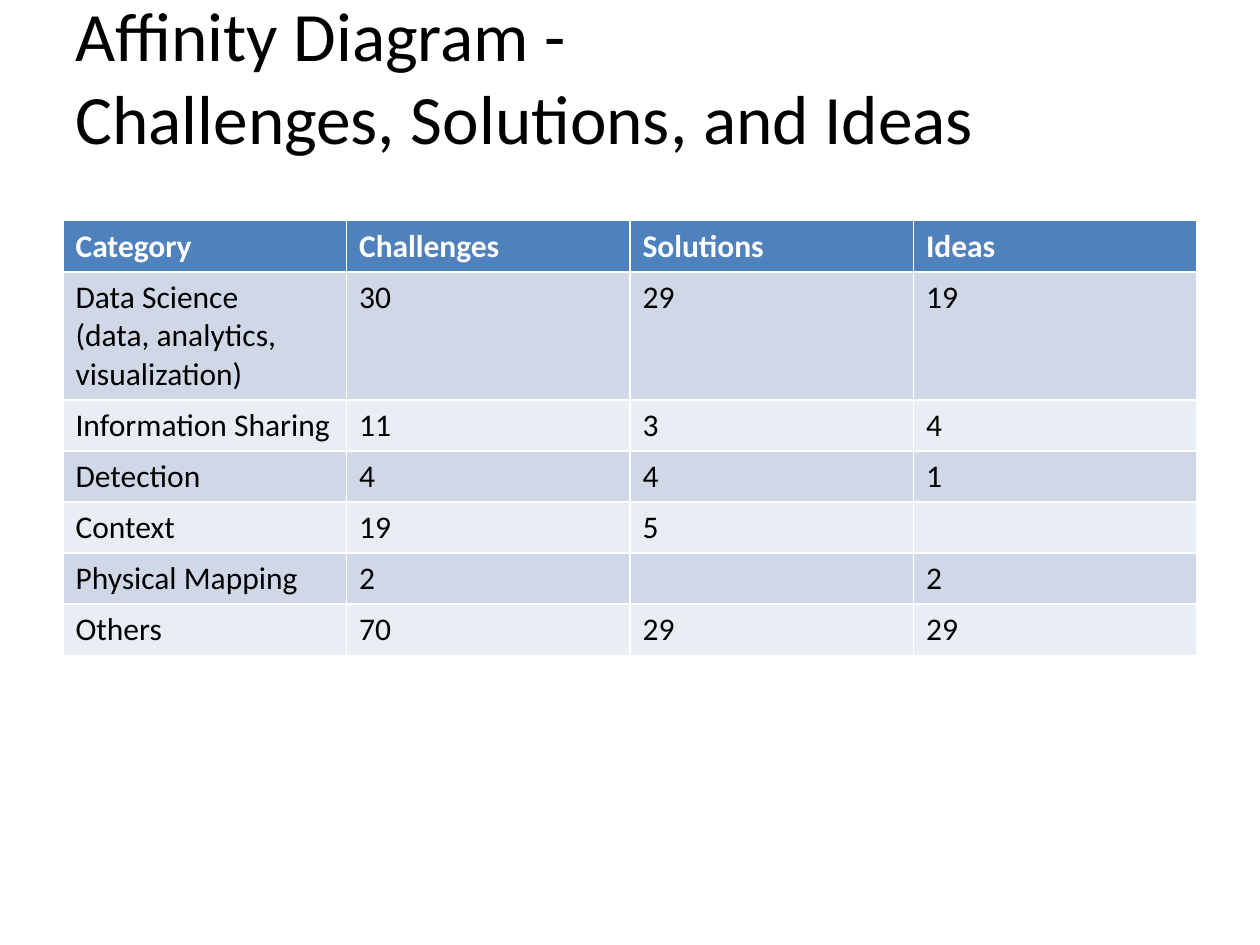
from dataclasses import dataclass

from pptx import Presentation
from pptx.dml.color import RGBColor as Rgb
from pptx.enum.text import MSO_ANCHOR as Anchor, MSO_AUTO_SIZE as Fit
from pptx.util import Cm, Pt


@dataclass(frozen=True)
class Theme:
    font: str = "Calibri"
    title: float = 39.6
    body: float = 18
    ink: str = "000000"
    light: str = "FFFFFF"
    head: str = "4F81BD"
    bands: tuple[str, str] = ("D0D8E8", "E9EDF4")


@dataclass(frozen=True)
class Row:
    name: str
    counts: tuple[str, str, str]


THEME = Theme()
LEFT, WIDTH = Cm(1.27), Cm(22.86)
TITLE = "Affinity Diagram - \vChallenges, Solutions, and Ideas"
ROWS = [
    Row("Category", ("Challenges", "Solutions", "Ideas")),
    Row("Data Science\n(data, analytics, visualization)", ("30", "29", "19")),
    Row("Information Sharing", ("11", "3", "4")),
    Row("Detection", ("4", "4", "1")),
    Row("Context", ("19", "5", "")),
    Row("Physical Mapping", ("2", "", "2")),
    Row("Others", ("70", "29", "29")),
]


def style(frame, size: float, color: str, bold: bool = False) -> None:
    for para in frame.paragraphs:
        font = para.font
        font.name, font.size, font.bold = THEME.font, Pt(size), bold
        font.color.rgb = Rgb.from_string(color)


def add_title(slide, text: str) -> None:
    box = slide.shapes.add_textbox(LEFT, Cm(0.76), WIDTH, Cm(3.18))
    frame = box.text_frame
    frame.word_wrap = True
    frame.auto_size = Fit.NONE
    frame.vertical_anchor = Anchor.MIDDLE
    frame.margin_bottom = Cm(1.8)  # lifts the two lines above the centre
    frame.text = text
    style(frame, THEME.title, THEME.ink)


def add_grid(slide, rows: list[Row]) -> None:
    cols = 1 + len(rows[0].counts)
    high = Cm(1.03) * len(rows)
    grid = slide.shapes.add_table(len(rows), cols, LEFT, Cm(4.45), WIDTH, high).table
    for i, row in enumerate(rows):
        head = i == 0
        fill = THEME.head if head else THEME.bands[(i - 1) % 2]
        color = THEME.light if head else THEME.ink
        for j, text in enumerate((row.name, *row.counts)):
            cell = grid.cell(i, j)
            cell.text = text
            cell.fill.solid()
            cell.fill.fore_color.rgb = Rgb.from_string(fill)
            style(cell.text_frame, THEME.body, color, head)


def main() -> None:
    deck = Presentation()
    deck.slide_width, deck.slide_height = Cm(25.4), Cm(19.05)
    slide = deck.slides.add_slide(deck.slide_layouts[6])

    # Heading
    add_title(slide, TITLE)

    # Counts by category
    add_grid(slide, ROWS)

    deck.save("out.pptx")


if __name__ == "__main__":
    main()
